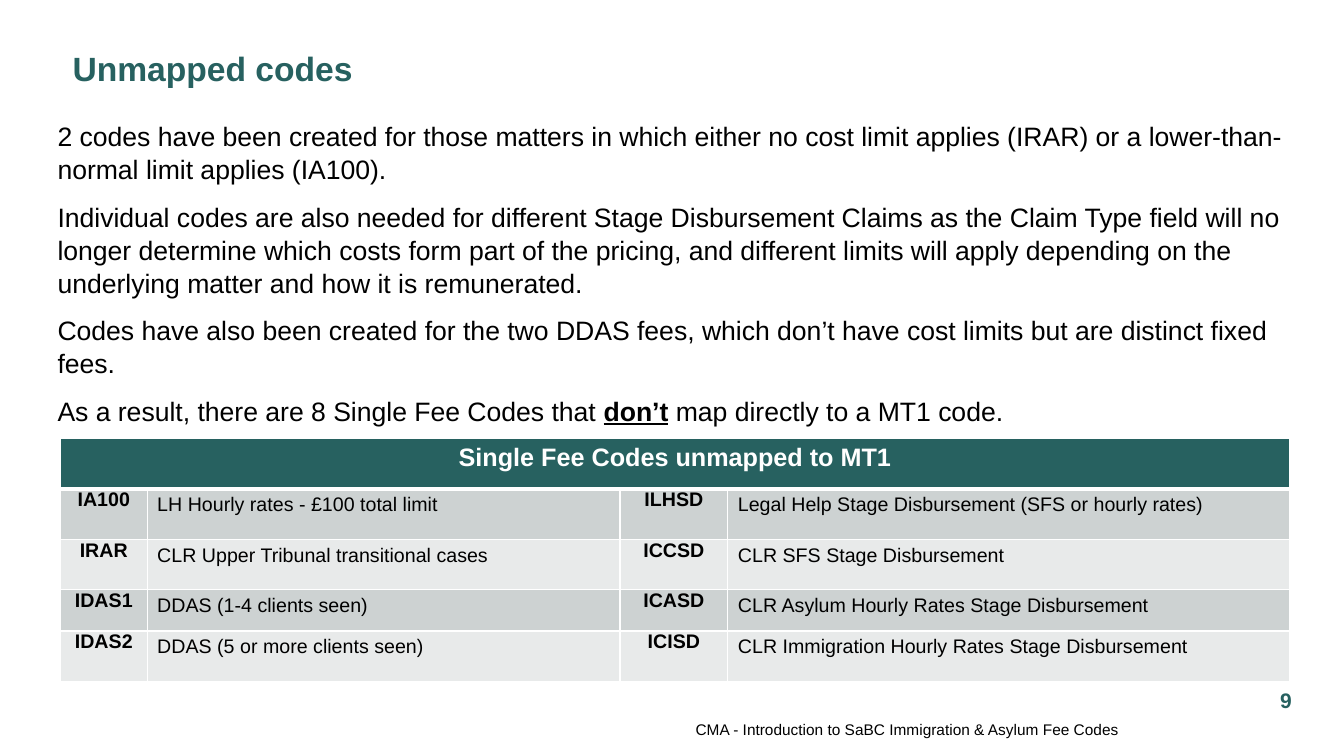
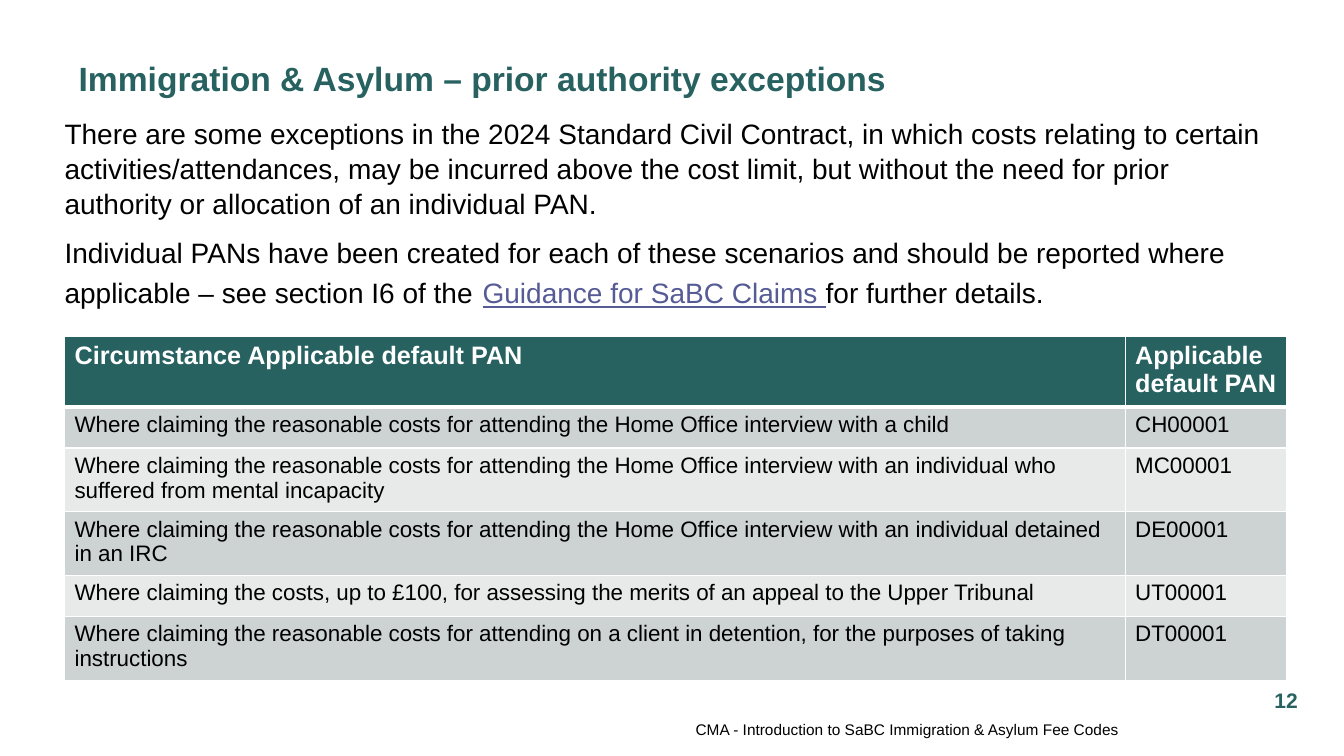
from lxml import etree
from pptx import Presentation
from pptx import util as u
from pptx.dml import color
from pptx.enum import text
from pptx.oxml import ns

SLIDE_WIDTH, SLIDE_HEIGHT = u.Inches(13.33), u.Inches(7.5)
COLORS = {
    "teal": "276160",
    "ink": "000000",
    "paper": "FFFFFF",
    "band_dark": "CDD2D2",
    "band_light": "E8EAEA",
    "reference": "565B96",
}
TITLE = {"size": 24, "bold": True, "color": "teal"}
PAGE_NUMBER = {"size": 15, "bold": True, "color": "teal"}
FOOTER = {"size": 11}
HEADING = {"size": 18, "bold": True, "color": "paper"}
CODE = {"size": 14, "bold": True}
FOOTER_TEXT = "CMA - Introduction to SaBC Immigration & Asylum Fee Codes"
SIDES = ("left", "top", "right", "bottom")
CENTER, RIGHT = text.PP_ALIGN.CENTER, text.PP_ALIGN.RIGHT
MIDDLE = text.MSO_ANCHOR.MIDDLE


def across(percent):
    return round(SLIDE_WIDTH * percent / 100)


def down(percent):
    return round(SLIDE_HEIGHT * percent / 100)


def rgb(name):
    return color.RGBColor.from_string(COLORS[name])


def add_run(paragraph, words, style):
    run = paragraph.add_run()
    run.text = words
    look = {"name": "Arial", "bold": False, "color": "ink", **style}
    run.font.color.rgb = rgb(look.pop("color"))
    look["size"] = u.Pt(look["size"])
    for key, value in look.items():
        setattr(run.font, key, value)


def add_text(slide, place, paragraphs, style, anchor=None, **paragraph_format):
    left, top, width, height = place
    frame = slide.shapes.add_textbox(
        across(left), down(top), across(width), down(height)).text_frame
    frame.word_wrap = True
    frame.vertical_anchor = anchor
    for side in SIDES:
        setattr(frame, "margin_" + side, 0)
    for index, runs in enumerate(paragraphs):
        paragraph = frame.add_paragraph() if index else frame.paragraphs[0]
        for key, value in paragraph_format.items():
            setattr(paragraph, key, value)
        for words, changes in runs:
            add_run(paragraph, words, {**style, **changes})


def add_body(slide, place, paragraphs, size):
    add_text(slide, place, paragraphs, {"size": size},
             line_spacing=1.04, space_after=u.Pt(10))


def set_borders(cell, row):
    properties = cell._tc.get_or_add_tcPr()
    widths = {"L": 1, "R": 1, "T": 3 if row == 1 else 1, "B": 1 if row else 3}
    for side, points in widths.items():
        line = etree.SubElement(properties, ns.qn("a:ln" + side), w=str(u.Pt(points)))
        fill = etree.SubElement(line, ns.qn("a:solidFill"))
        etree.SubElement(fill, ns.qn("a:srgbClr"), val=COLORS["paper"])


def add_grid(slide, left, top, columns, heights, rows, size,
             heading_align=None, code_columns=()):
    table = slide.shapes.add_table(
        len(rows), len(columns), across(left), down(top),
        across(sum(columns)), down(sum(heights))).table
    table.horz_banding = False
    for column, width in zip(table.columns, columns):
        column.width = across(width)
    for row, height in zip(table.rows, heights):
        row.height = down(height)
    for row, entries in enumerate(rows):
        band = "band_dark" if row % 2 else "band_light"
        for column in range(len(columns)):
            cell = table.cell(row, column)
            set_borders(cell, row)
            cell.fill.solid()
            cell.fill.fore_color.rgb = rgb(band if row else "teal")
            if column >= len(entries):
                continue
            paragraph = cell.text_frame.paragraphs[0]
            style = {"size": size}
            if row == 0:
                style = HEADING
                paragraph.alignment = heading_align
            elif column in code_columns:
                style = CODE
                paragraph.alignment = CENTER
                for side in SIDES:
                    setattr(cell, "margin_" + side, 0)
            add_run(paragraph, entries[column], style)
    if len(rows[0]) == 1:
        table.cell(0, 0).merge(table.cell(0, len(columns) - 1))


def add_page(deck, title, title_left, title_top, number):
    slide = deck.slides.add_slide(deck.slide_layouts[6])
    add_text(slide, (title_left, title_top, 88, 13.07), [[(title, {})]], TITLE, MIDDLE)
    add_text(slide, (93.85, 90, 3.68, 5.33), [[(number, {})]], PAGE_NUMBER,
             MIDDLE, alignment=CENTER)
    add_text(slide, (24.16, 95.2, 59.11, 2.67), [[(FOOTER_TEXT, {})]], FOOTER,
             MIDDLE, alignment=RIGHT)
    return slide


def add_unmapped_codes(deck):
    slide = add_page(deck, "Unmapped codes", 5.4, 2.53, "9")
    add_body(slide, (4.28, 15.73, 91.45, 41.33), [
        [("2 codes have been created for those matters in which either no cost limit "
          "applies (IRAR) or a lower-than-normal limit applies (IA100).", {})],
        [("Individual codes are also needed for different Stage Disbursement Claims as "
          "the Claim Type field will no longer determine which costs form part of the "
          "pricing, and different limits will apply depending on the underlying matter "
          "and how it is remunerated.", {})],
        [("Codes have also been created for the two DDAS fees, which don’t have cost "
          "limits but are distinct fixed fees.", {})],
        [("As a result, there are 8 Single Fee Codes that ", {}),
         ("don’t", {"bold": True, "underline": True}),
         (" map directly to a MT1 code.", {})],
    ], 19)
    fee_codes = [
        ("Single Fee Codes unmapped to MT1",),
        ("IA100", "LH Hourly rates - £100 total limit",
         "ILHSD", "Legal Help Stage Disbursement (SFS or hourly rates)"),
        ("IRAR", "CLR Upper Tribunal transitional cases",
         "ICCSD", "CLR SFS Stage Disbursement"),
        ("IDAS1", "DDAS (1-4 clients seen)",
         "ICASD", "CLR Asylum Hourly Rates Stage Disbursement"),
        ("IDAS2", "DDAS (5 or more clients seen)",
         "ICISD", "CLR Immigration Hourly Rates Stage Disbursement"),
    ]
    add_grid(slide, 4.5, 58, (6.45, 35.18, 8.03, 41.79),
             (6.67, 6.67, 6.67, 5.47, 6.67), fee_codes, 14,
             heading_align=CENTER, code_columns=(0, 2))


def add_authority_exceptions(deck):
    slide = add_page(deck, "Immigration & Asylum – prior authority exceptions",
                     5.85, 3.73, "12")
    add_body(slide, (4.8, 15.2, 90.7, 29.2), [
        [("There are some exceptions in the 2024 Standard Civil Contract, in which costs "
          "relating to certain activities/attendances, may be incurred above the cost "
          "limit, but without the need for prior authority or allocation of an "
          "individual PAN.", {})],
        [("Individual PANs have been created for each of these scenarios and should be "
          "reported where applicable – see section I6 of the", {}),
         (" ", {"size": 24}),
         ("Guidance for SaBC Claims ", {"color": "reference", "underline": True}),
         ("for further details.", {})],
    ], 20)
    interview = ("Where claiming the reasonable costs for attending "
                 "the Home Office interview with ")
    default_pans = [
        ("Circumstance Applicable default PAN", "Applicable default PAN"),
        (interview + "a child", "CH00001"),
        (interview + "an individual who suffered from mental incapacity", "MC00001"),
        (interview + "an individual detained in an IRC", "DE00001"),
        ("Where claiming the costs, up to £100, for assessing the merits of an appeal "
         "to the Upper Tribunal", "UT00001"),
        ("Where claiming the reasonable costs for attending on a client in detention, "
         "for the purposes of taking instructions", "DT00001"),
    ]
    add_grid(slide, 4.8, 44.53, (78.92, 12), [5.4] * len(default_pans),
             default_pans, 16)


def main():
    deck = Presentation()
    deck.slide_width, deck.slide_height = SLIDE_WIDTH, SLIDE_HEIGHT
    add_unmapped_codes(deck)
    add_authority_exceptions(deck)
    deck.save("out.pptx")


if __name__ == "__main__":
    main()
